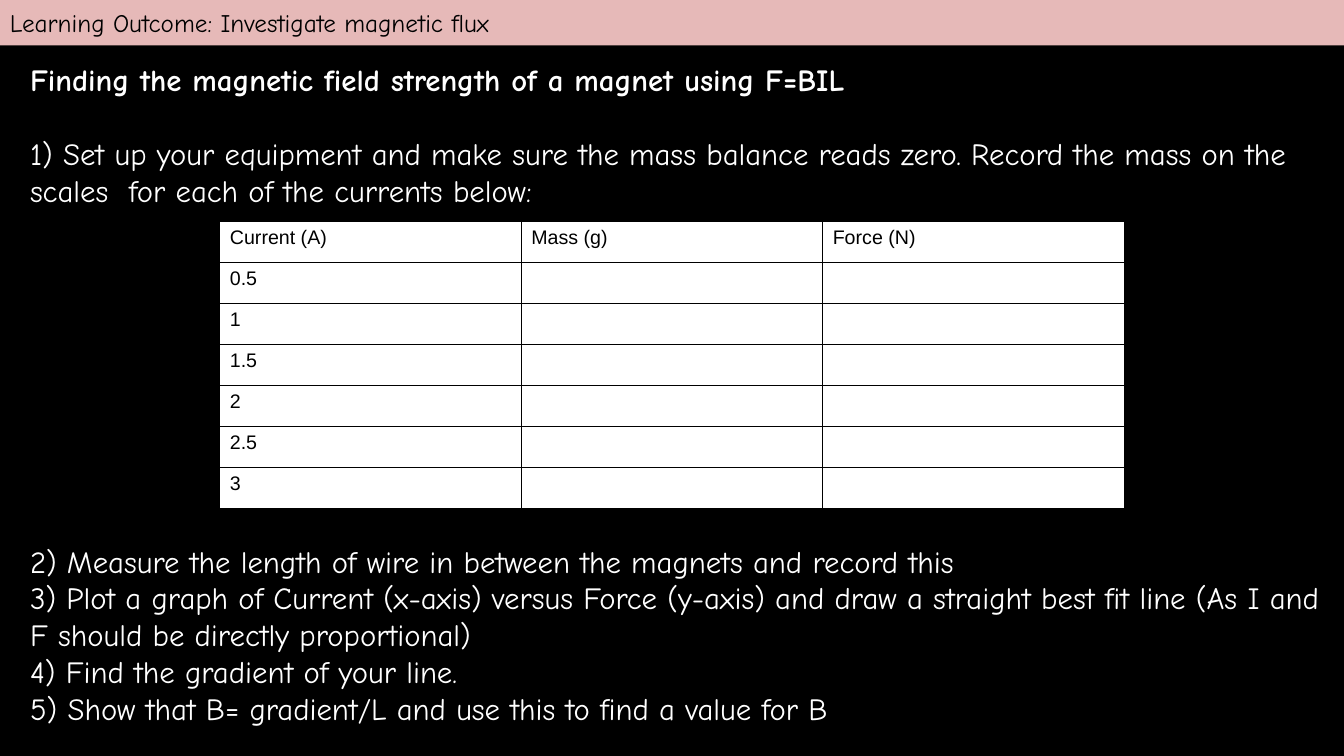
from lxml.etree import SubElement
from pptx import Presentation
from pptx.dml.color import RGBColor
from pptx.enum.shapes import MSO_SHAPE
from pptx.enum.text import MSO_ANCHOR, PP_ALIGN
from pptx.oxml.ns import qn
from pptx.util import Inches, Pt

OUTCOME = "Learning Outcome: Investigate magnetic flux"
HEADING = "Finding the magnetic field strength of a magnet using F=BIL"
SETUP = ("1) Set up your equipment and make sure the mass balance reads zero. "
         "Record the mass on the scales  for each of the currents below:")
STEPS = [
    "2) Measure the length of wire in between the magnets and record this",
    "3) Plot a graph of Current (x-axis) versus Force (y-axis) and draw a "
    "straight best fit line (As I and F should be directly proportional)",
    "4) Find the gradient of your line.",
    "5) Show that B= gradient/L and use this to find a value for B",
]
COLUMNS = ["Current (A)", "Mass (g)", "Force (N)"]
CURRENTS = ["0.5", "1", "1.5", "2", "2.5", "3"]

WIDTH, HEIGHT = 13.33, 7.5
BANNER_H = 0.06 * HEIGHT
TEXT_LEFT = 0.2
TABLE_TOP, COL_W, ROW_H = 2.2, 2.99, 0.406
BLACK, WHITE, PINK = "000000", "FFFFFF", "E6B9B8"


def paint(fill, color):
    fill.solid()
    fill.fore_color.rgb = RGBColor.from_string(color)


def write(p, text, size=22, font="Comic Neue", color=WHITE, bold=False, after=0):
    p.alignment = PP_ALIGN.LEFT
    p.space_after = Pt(after)
    r = p.add_run()
    r.text = text
    r.font.size, r.font.name, r.font.bold = Pt(size), font, bold
    r.font.color.rgb = RGBColor.from_string(color)


def add_text(slide, top, height):
    box = slide.shapes.add_textbox(Inches(TEXT_LEFT), Inches(top),
                                   Inches(WIDTH - TEXT_LEFT), Inches(height))
    box.text_frame.word_wrap = True
    return box.text_frame


def add_borders(cell, color, width):
    """Draw all four sides; the line elements must come before the fill."""
    tc_pr = cell._tc.get_or_add_tcPr()
    for i, side in enumerate(("a:lnL", "a:lnR", "a:lnT", "a:lnB")):
        ln = SubElement(tc_pr, qn(side), w=str(Pt(width)))
        SubElement(SubElement(ln, qn("a:solidFill")), qn("a:srgbClr"), val=color)
        tc_pr.insert(i, ln)


def add_results_table(slide):
    rows = [COLUMNS] + [[current, "", ""] for current in CURRENTS]
    w, h = COL_W * len(COLUMNS), ROW_H * len(rows)
    table = slide.shapes.add_table(len(rows), len(COLUMNS), Inches((WIDTH - w) / 2),
                                   Inches(TABLE_TOP), Inches(w), Inches(h)).table
    table.first_row = table.horz_banding = False
    for row, values in zip(table.rows, rows):
        row.height = Inches(ROW_H)
        for cell, value in zip(row.cells, values):
            paint(cell.fill, WHITE)
            add_borders(cell, BLACK, 1)
            p = cell.text_frame.paragraphs[0]
            if value:
                write(p, value, size=14, font="Arial", color=BLACK)
            else:
                p.font.size = Pt(14)


def add_banner(slide):
    sp = slide.shapes.add_shape(MSO_SHAPE.RECTANGLE, 0, 0, Inches(WIDTH), Inches(BANNER_H))
    sp.shadow.inherit = False
    paint(sp.fill, PINK)
    sp.line.fill.background()
    tf = sp.text_frame
    tf.word_wrap = True
    tf.vertical_anchor = MSO_ANCHOR.MIDDLE
    write(tf.paragraphs[0], OUTCOME, size=18, color=BLACK)


def main():
    prs = Presentation()
    prs.slide_width, prs.slide_height = Inches(WIDTH), Inches(HEIGHT)
    slide = prs.slides.add_slide(prs.slide_layouts[6])
    paint(slide.background.fill, BLACK)

    tf = add_text(slide, top=0.55, height=1.55)
    write(tf.paragraphs[0], HEADING, bold=True, after=26.4)
    write(tf.add_paragraph(), SETUP)

    add_results_table(slide)

    tf = add_text(slide, top=5.33, height=1.95)
    for i, step in enumerate(STEPS):
        write(tf.add_paragraph() if i else tf.paragraphs[0], step)

    add_banner(slide)
    prs.save("out.pptx")


if __name__ == "__main__":
    main()
